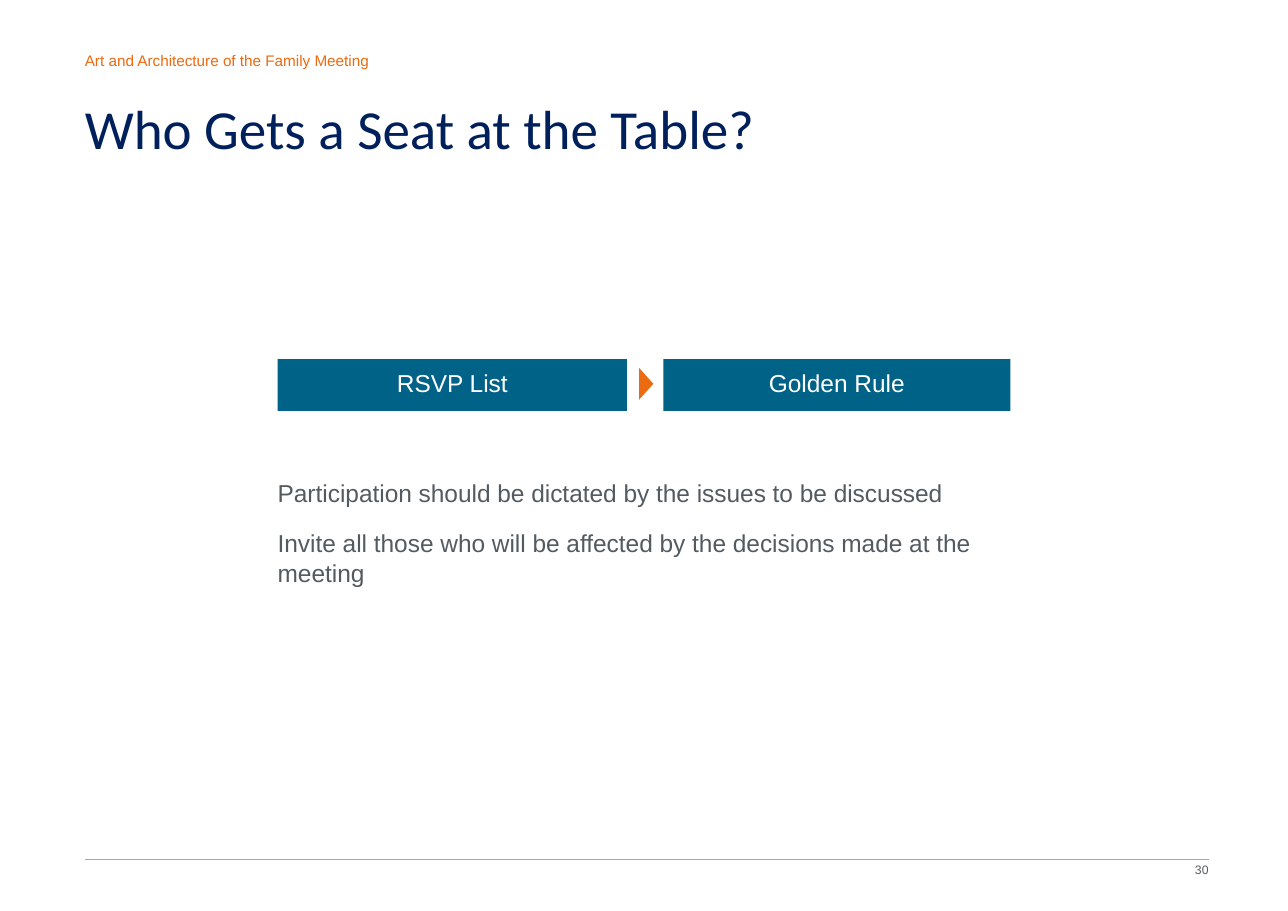
"""Build the family meeting slide on who gets a seat at the table."""
from dataclasses import dataclass, field
from typing import Any

from pptx import Presentation
from pptx.dml.color import RGBColor
from pptx.enum.shapes import MSO_CONNECTOR, MSO_SHAPE
from pptx.enum.text import MSO_ANCHOR, PP_ALIGN
from pptx.oxml.ns import qn
from pptx.slide import Slide
from pptx.text.text import TextFrame
from pptx.util import Inches, Length, Pt

WIDTH, HEIGHT = Inches(11.69), Inches(8.27)
NAVY = RGBColor(0x00, 0x20, 0x5B)
TEAL = RGBColor(0x00, 0x62, 0x87)
ORANGE = RGBColor(0xEC, 0x6B, 0x10)
SLATE = RGBColor(0x53, 0x5B, 0x61)
GREY = RGBColor(0xA7, 0xA8, 0xAA)
WHITE = RGBColor(0xFF, 0xFF, 0xFF)

MARGIN_LEFT, MARGIN_RIGHT = 6.59, 93.84
CONTENT_LEFT = 21.56
BANNER_TOP, BANNER_HEIGHT = 39.42, 5.68


@dataclass(frozen=True)
class Area:
    """A rectangle in percent of the slide's width and height."""
    left: float
    top: float
    width: float
    height: float

    def lengths(self) -> tuple[Length, ...]:
        """Return left, top, width and height as slide lengths."""
        return (across(self.left), down(self.top),
                across(self.width), down(self.height))


@dataclass(frozen=True)
class Label:
    """Text with its area, font values and paragraph values."""
    area: Area
    lines: tuple[str, ...]
    size: float
    color: RGBColor
    font_name: str = "Arial"
    paragraph_format: dict[str, Any] = field(default_factory=dict)
    gap: float = 0


def across(percent: float) -> Length:
    """Convert a percentage of the slide's width."""
    return Length(round(WIDTH * percent / 100))


def down(percent: float) -> Length:
    """Convert a percentage of the slide's height."""
    return Length(round(HEIGHT * percent / 100))


def set_attributes(target: Any, values: dict[str, Any]) -> None:
    """Set each named value on the target."""
    for name, value in values.items():
        setattr(target, name, value)


def write_label(text_frame: TextFrame, label: Label,
                margins: tuple[float, float] = (0, 0),
                anchor: MSO_ANCHOR = MSO_ANCHOR.TOP) -> None:
    """Fill a text frame with the label's formatted paragraphs."""
    side, edge = map(Inches, margins)
    set_attributes(text_frame, {
        "word_wrap": True, "vertical_anchor": anchor,
        "margin_left": side, "margin_right": side,
        "margin_top": edge, "margin_bottom": edge,
    })
    for index, line in enumerate(label.lines):
        paragraph = text_frame.paragraphs[0] if index == 0 else text_frame.add_paragraph()
        set_attributes(paragraph, label.paragraph_format)
        if index:
            paragraph.space_before = Pt(label.gap)
        run = paragraph.add_run()
        run.text = line
        set_attributes(run.font, {"name": label.font_name, "size": Pt(label.size)})
        run.font.color.rgb = label.color


def add_text(slide: Slide, label: Label) -> None:
    """Draw a label as a text box."""
    text_box = slide.shapes.add_textbox(*label.area.lengths())
    write_label(text_box.text_frame, label)


def add_solid(slide: Slide, kind: MSO_SHAPE, area: Area, color: RGBColor) -> Any:
    """Draw a filled shape without outline or shadow."""
    shape = slide.shapes.add_shape(kind, *area.lengths())
    shape.shadow.inherit = False
    shape.fill.solid()
    shape.fill.fore_color.rgb = color
    shape.line.fill.background()
    return shape


def add_banner(slide: Slide, label: Label) -> None:
    """Draw a label as a teal banner."""
    shape = add_solid(slide, MSO_SHAPE.RECTANGLE, label.area, TEAL)
    write_label(shape.text_frame, label, (0.24, 0.12), MSO_ANCHOR.MIDDLE)


def add_footer_rule(slide: Slide) -> None:
    """Draw the thin line above the page number."""
    height = down(94.32)
    rule = slide.shapes.add_connector(
        MSO_CONNECTOR.STRAIGHT, across(MARGIN_LEFT), height, across(MARGIN_RIGHT), height)
    rule.line.color.rgb = GREY
    rule.line.width = Pt(0.35)
    properties = rule._element.spPr
    properties.append(properties.makeelement(qn("a:effectLst"), {}))


TEXTS = (
    Label(Area(80.24, 94.68, 13.6, 1.57), ("30",), 8, SLATE,
          paragraph_format={"alignment": PP_ALIGN.RIGHT}),
    Label(Area(MARGIN_LEFT, 5.8, 28.66, 2.3),
          ("Art and Architecture of the Family Meeting",), 10, ORANGE,
          paragraph_format={"line_spacing": 0.9}),
    Label(Area(MARGIN_LEFT, 10.88, 79.81, 6.29),
          ("Who Gets a Seat at the Table?",), 36, NAVY, "Calibri",
          {"line_spacing": Pt(40)}),
    Label(Area(CONTENT_LEFT, 52.48, 56.97, 8.95),
          ("Participation should be dictated by the issues to be discussed",
           "Invite all those who will be affected by the decisions made at the meeting"),
          16, SLATE, gap=13.8),
)
BANNERS = tuple(
    Label(Area(left, BANNER_TOP, width, BANNER_HEIGHT), (text,), 16, WHITE,
          paragraph_format={"alignment": PP_ALIGN.CENTER, "line_spacing": 0.9})
    for text, left, width in (("RSVP List", CONTENT_LEFT, 27.12),
                              ("Golden Rule", 51.5, 26.95))
)


def main() -> None:
    """Create the presentation and save it."""
    presentation = Presentation()
    set_attributes(presentation, {"slide_width": WIDTH, "slide_height": HEIGHT})
    slide = presentation.slides.add_slide(presentation.slide_layouts[6])
    add_footer_rule(slide)
    for label in TEXTS:
        add_text(slide, label)
    for label in BANNERS:
        add_banner(slide, label)
    arrow = add_solid(slide, MSO_SHAPE.ISOSCELES_TRIANGLE,
                      Area(48.93, 41.35, 2.48, 1.57), ORANGE)
    arrow.rotation = 90
    presentation.save("out.pptx")


if __name__ == "__main__":
    main()
